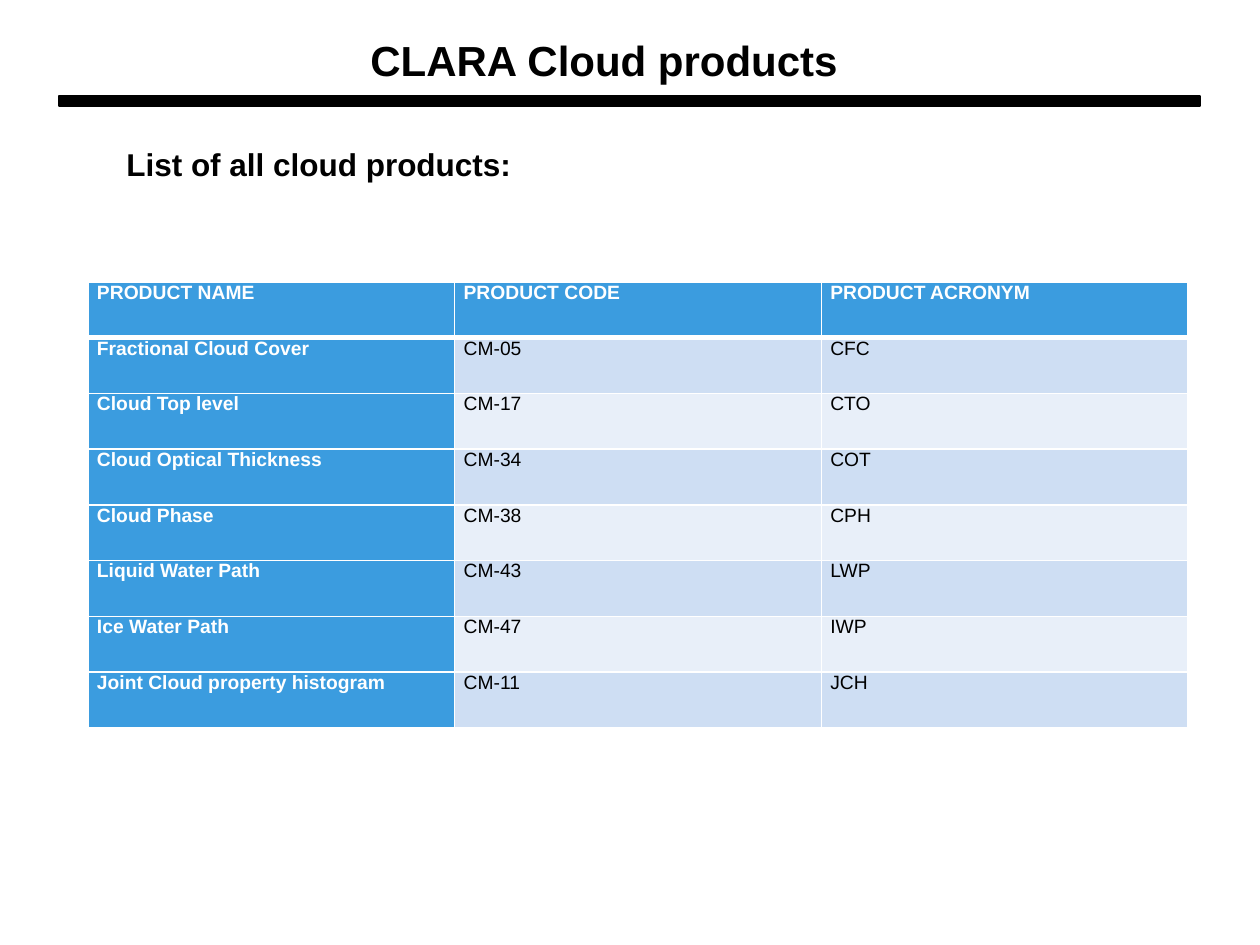
from lxml import etree
from pptx import Presentation
from pptx import util as u
from pptx.dml.color import RGBColor
from pptx.enum import shapes, text
from pptx.oxml import ns

PX_PER_INCH = 126
FONT = "Arial"
BLACK = RGBColor(0x00, 0x00, 0x00)
WHITE = RGBColor(0xFF, 0xFF, 0xFF)
BLUE = RGBColor(0x3B, 0x9C, 0xDF)
BANDS = (RGBColor(0xCE, 0xDE, 0xF3), RGBColor(0xE8, 0xEF, 0xF9))

PRODUCTS = [
    ("PRODUCT NAME", "PRODUCT CODE", "PRODUCT ACRONYM"),
    ("Fractional Cloud Cover", "CM-05", "CFC"),
    ("Cloud Top level", "CM-17", "CTO"),
    ("Cloud Optical Thickness", "CM-34", "COT"),
    ("Cloud Phase", "CM-38", "CPH"),
    ("Liquid Water Path", "CM-43", "LWP"),
    ("Ice Water Path", "CM-47", "IWP"),
    ("Joint Cloud property histogram", "CM-11", "JCH"),
]


def px(length):
    return u.Inches(length / PX_PER_INCH)


def px_box(box):
    return [px(length) for length in box]


def add_run(paragraph, words, size, color, bold):
    run = paragraph.add_run()
    run.text = words
    run.font.name = FONT
    run.font.size = u.Pt(size)
    run.font.bold = bold
    run.font.color.rgb = color


def add_heading(slide, box, words, size):
    frame = slide.shapes.add_textbox(*px_box(box)).text_frame
    frame.word_wrap = True
    frame.auto_size = text.MSO_AUTO_SIZE.SHAPE_TO_FIT_TEXT
    add_run(frame.paragraphs[0], words, size, BLACK, True)


def add_rule(slide, box):
    rule = slide.shapes.add_shape(shapes.MSO_SHAPE.RECTANGLE, *px_box(box))
    rule.shadow.inherit = False
    rule.fill.solid()
    rule.fill.fore_color.rgb = BLACK
    rule.line.color.rgb = BLACK
    rule.line.width = u.Pt(0.75)


def add_borders(cell, widths):
    properties = cell._tc.get_or_add_tcPr()
    for side, width in zip("LRTB", widths):
        border = etree.SubElement(properties, ns.qn(f"a:ln{side}"), w=str(u.Pt(width)))
        fill = etree.SubElement(border, ns.qn("a:solidFill"))
        etree.SubElement(fill, ns.qn("a:srgbClr"), val=str(WHITE))


def fill_cell(cell, words, row, column):
    heading = row == 0 or column == 0
    top = 3 if row == 1 else 1
    bottom = 3 if row == 0 else 1
    add_borders(cell, (1, 1, top, bottom))
    cell.fill.solid()
    cell.fill.fore_color.rgb = BLUE if heading else BANDS[(row - 1) % 2]
    cell.margin_left = cell.margin_right = px(9)
    cell.margin_top = cell.margin_bottom = 0
    paragraph = cell.text_frame.paragraphs[0]
    paragraph.space_after = u.Pt(2)
    add_run(paragraph, words, 11, WHITE if heading else BLACK, heading)


def add_product_table(slide, box):
    table = slide.shapes.add_table(
        len(PRODUCTS), len(PRODUCTS[0]), *px_box(box)).table
    table.first_col = True
    for row, product in enumerate(PRODUCTS):
        for column, words in enumerate(product):
            fill_cell(table.cell(row, column), words, row, column)


def main():
    deck = Presentation()
    deck.slide_width, deck.slide_height = px(1260), px(945)
    slide = deck.slides.add_slide(deck.slide_layouts[6])
    add_rule(slide, (59, 96, 1141, 10))
    add_heading(slide, (358, 28, 678, 63), "CLARA Cloud products", 24)
    add_heading(slide, (114, 139, 1187, 50), "List of all cloud products:", 18)
    add_product_table(slide, (88, 282, 1100, 446))
    deck.save("out.pptx")


if __name__ == "__main__":
    main()
